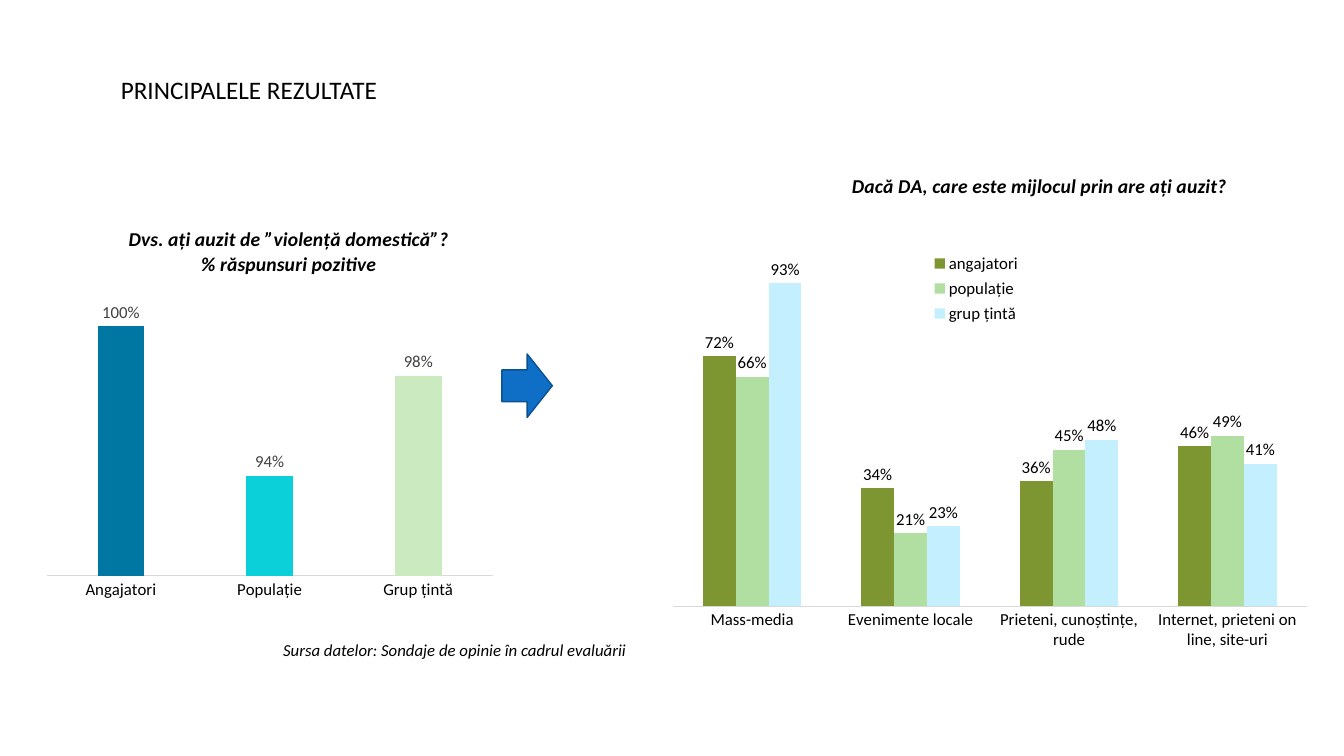
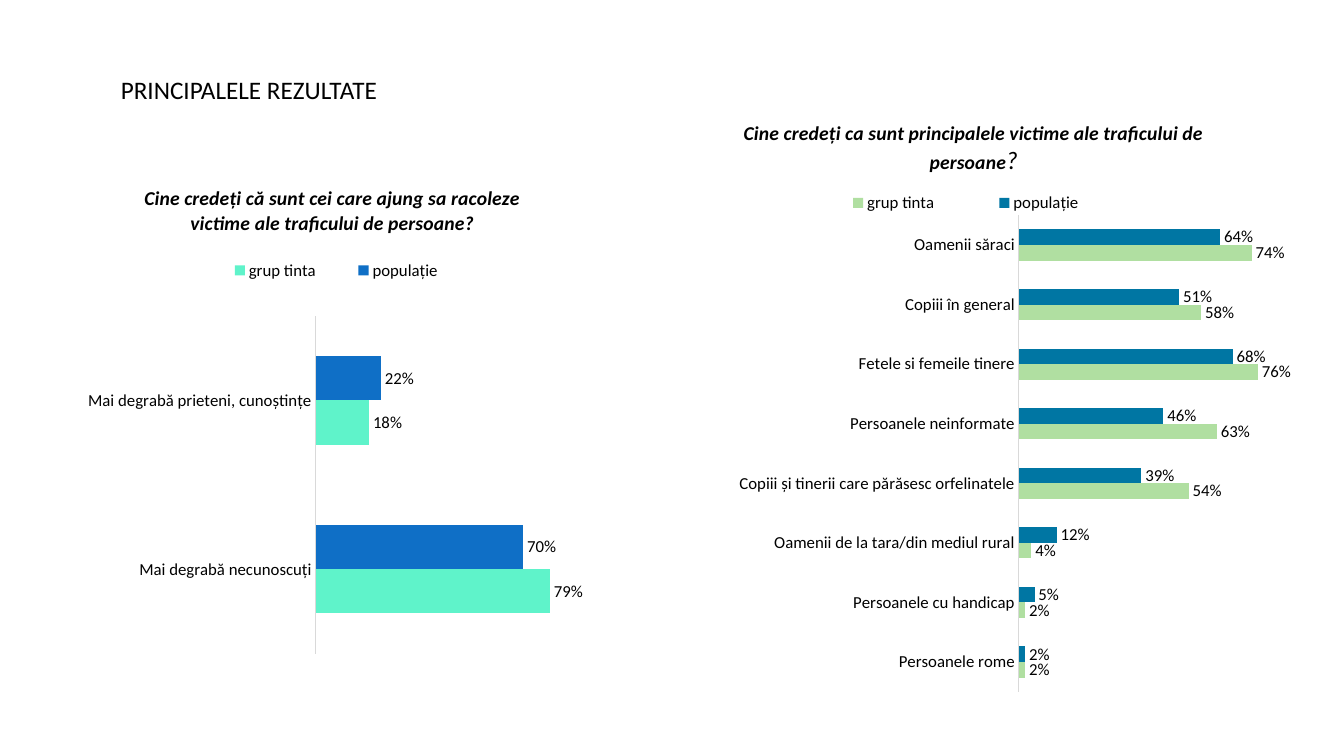
"""Build two slides of survey results with native charts."""
from lxml.etree import SubElement
from pptx import Presentation
from pptx.chart.data import CategoryChartData
from pptx.dml.color import RGBColor
from pptx.enum.chart import (XL_CHART_TYPE, XL_LABEL_POSITION,
                             XL_LEGEND_POSITION, XL_TICK_MARK)
from pptx.enum.shapes import MSO_SHAPE
from pptx.enum.text import MSO_ANCHOR, MSO_AUTO_SIZE, PP_ALIGN
from pptx.oxml.ns import qn
from pptx.util import Cm, Pt

FONT = "Calibri"
BLACK, GREY, RULE = "000000", "404040", "D9D9D9"
BLUE, EDGE, TEAL, CYAN = "0F6FC6", "0B5292", "0076A3", "0BD0D9"
OLIVE, GREEN, PALE, SKY, MINT = "7E9632", "B0DFA1", "CBEAC0", "C4EFFF", "5FF3CA"
COLUMN, BAR = XL_CHART_TYPE.COLUMN_CLUSTERED, XL_CHART_TYPE.BAR_CLUSTERED
HEAD = "PRINCIPALELE REZULTATE"


def rgb(code):
    return RGBColor.from_string(code)


def paint(item, code):
    item.format.fill.solid()
    item.format.fill.fore_color.rgb = rgb(code)


def style(font, size=12, color=BLACK, bold=False, italic=False):
    font.name, font.size = FONT, Pt(size)
    font.color.rgb = rgb(color)
    font.bold, font.italic = bold, italic


def place(part, spot, inner=False):
    """Pin a chart part at fractions of the chart's width and height."""
    for old in part.findall(qn("c:layout")):
        part.remove(old)
    layout = SubElement(part, qn("c:layout"))
    over = part.find(qn("c:overlay"))
    if over is None:
        part.insert(0, layout)
    else:
        over.addprevious(layout)
    manual = SubElement(layout, qn("c:manualLayout"))
    pairs = [("layoutTarget", "inner")] if inner else []
    pairs += [("xMode", "edge"), ("yMode", "edge")]
    pairs += zip("xywh", spot)
    for name, value in pairs:
        SubElement(manual, qn("c:" + name)).set("val", str(value))


def add_title(chart, text, spot, mark=""):
    """Set the question above a chart, with an optional larger end mark."""
    frame = chart.chart_title.text_frame
    frame.text = text
    for para in frame.paragraphs:
        para.alignment = PP_ALIGN.CENTER
        for run in para.runs:
            style(run.font, 14, bold=True, italic=True)
    if mark:
        run = frame.paragraphs[-1].add_run()
        run.text = mark
        style(run.font, 18, italic=True)
    place(chart.element.xpath("c:chart/c:title")[0], spot)


def add_legend(chart, side, spot):
    chart.has_legend = True
    chart.legend.position = side
    chart.legend.include_in_layout = False
    style(chart.legend.font)
    place(chart.element.xpath("c:chart/c:legend")[0], spot)


def set_axes(chart, low, high, flip):
    cats, vals = chart.category_axis, chart.value_axis
    cats.major_tick_mark = cats.minor_tick_mark = XL_TICK_MARK.NONE
    cats.has_major_gridlines = False
    cats.reverse_order = flip
    style(cats.tick_labels.font)
    cats.format.line.color.rgb = rgb(RULE)
    cats.format.line.width = Pt(0.75)
    vals.minimum_scale, vals.maximum_scale = low, high
    vals.has_major_gridlines = False
    vals.visible = False


def add_bars(slide, kind, box, cats, rows, plot, low=0, high=1, gap=182,
             overlap=0, ink=BLACK):
    """Add a clustered chart from rows of name, colour and values."""
    data = CategoryChartData(number_format="0%")
    data.categories = cats
    for name, _, vals in rows:
        data.add_series(name, vals)
    chart = slide.shapes.add_chart(kind, *map(Cm, box), data).chart
    style(chart.font)
    chart.has_legend = False
    set_axes(chart, low, high, kind == BAR)
    group = chart.plots[0]
    group.gap_width, group.overlap = gap, overlap
    group.vary_by_categories = False
    for series, (_, color, _) in zip(group.series, rows):
        series.invert_if_negative = False
        paint(series, color)
        labels = series.data_labels
        labels.show_value = True
        labels.number_format, labels.number_format_is_linked = "0%", False
        labels.position = XL_LABEL_POSITION.OUTSIDE_END
        style(labels.font, color=ink)
    place(chart.element.xpath("c:chart/c:plotArea")[0], plot, inner=True)
    return chart


def add_slide(deck):
    """Add a title-only slide under the shared heading."""
    slide = deck.slides.add_slide(deck.slide_layouts[5])
    head = slide.shapes.title
    head.left, head.top, head.width, head.height = map(Cm, (2.79, 1.75, 8.69, 1.02))
    frame = head.text_frame
    frame.text = HEAD
    frame.auto_size = MSO_AUTO_SIZE.NONE
    frame.vertical_anchor = MSO_ANCHOR.MIDDLE
    frame.paragraphs[0].alignment = PP_ALIGN.LEFT
    style(frame.paragraphs[0].runs[0].font, 18)
    return slide


def add_note(slide, text, box):
    frame = slide.shapes.add_textbox(*map(Cm, box)).text_frame
    frame.word_wrap = True
    frame.text = text
    para = frame.paragraphs[0]
    para.alignment = PP_ALIGN.CENTER
    style(para.runs[0].font, italic=True)


def add_arrow(slide, box):
    arrow = slide.shapes.add_shape(MSO_SHAPE.RIGHT_ARROW, *map(Cm, box))
    arrow.shadow.inherit = False
    arrow.fill.solid()
    arrow.fill.fore_color.rgb = rgb(BLUE)
    arrow.line.color.rgb = rgb(EDGE)
    arrow.line.width = Pt(1)


def build_heard(deck):
    """Show who has heard of domestic violence, and where."""
    slide = add_slide(deck)
    heard = add_bars(
        slide, COLUMN, (0.94, 5, 11.71, 10.34),
        ["Angajatori", "Populație", "Grup țintă"],
        [("Series 1", BLUE, (1, 0.94, 0.98))],
        (0.02, 0.19, 0.96, 0.73), low=0.9, high=1.02, gap=219, overlap=-27,
        ink=GREY)
    for index, color in enumerate((TEAL, CYAN, PALE)):
        paint(heard.plots[0].series[0].points[index], color)
    add_title(heard, "Dvs. ați auzit de ”violență domestică”?\n"
              "% răspunsuri pozitive", (0.19, 0.06))
    media = add_bars(
        slide, COLUMN, (16.28, 3.3, 16.99, 13.46),
        ["Mass-media", "Evenimente locale", "Prieteni, cunoștințe, rude",
         "Internet, prieteni on line, site-uri"],
        [("angajatori", OLIVE, (0.72, 0.34, 0.36, 0.46)),
         ("populație", GREEN, (0.66, 0.21, 0.45, 0.49)),
         ("grup țintă", SKY, (0.93, 0.23, 0.48, 0.41))],
        (0.04, 0.24, 0.94, 0.65))
    add_title(media, "Dacă DA, care este mijlocul prin are ați auzit?",
              (0.3, 0.07))
    add_legend(media, XL_LEGEND_POSITION.RIGHT, (0.42, 0.22, 0.14, 0.15))
    add_note(slide, "Sursa datelor: Sondaje de opinie în cadrul evaluării",
             (5.54, 16, 11.84, 0.76))
    add_arrow(slide, (12.65, 8.92, 1.27, 1.6))


def build_victims(deck):
    """Show views on the recruiters and victims of trafficking."""
    slide = add_slide(deck)
    victims = add_bars(
        slide, BAR, (16.33, 2.46, 16.69, 15.6),
        ["Oamenii săraci", "Copiii în general", "Fetele si femeile tinere",
         "Persoanele neinformate",
         "Copiii și tinerii care părăsesc orfelinatele",
         "Oamenii de la tara/din mediul rural", "Persoanele cu handicap",
         "Persoanele rome"],
        [("populație", TEAL, (0.64, 0.51, 0.68, 0.46, 0.39, 0.12, 0.05, 0.02)),
         ("grup tinta", GREEN, (0.74, 0.58, 0.76, 0.63, 0.54, 0.04, 0.02, 0.02))],
        (0.56, 0.19, 0.38, 0.77), high=0.8)
    add_title(victims, "Cine credeți ca sunt principalele victime ale "
              "traficului de\npersoane", (0.14, 0.03), mark="?")
    add_legend(victims, XL_LEGEND_POSITION.TOP, (0.22, 0.15, 0.52, 0.04))
    agents = add_bars(
        slide, BAR, (1.88, 3.91, 12.93, 13.51),
        ["Mai degrabă prieteni, cunoștințe", "Mai degrabă necunoscuți"],
        [("populație", BLUE, (0.22, 0.7)), ("grup tinta", MINT, (0.18, 0.79))],
        (0.47, 0.3, 0.52, 0.63), high=0.9)
    add_title(agents, "Cine credeți că sunt cei care ajung sa racoleze\n"
              "victime ale traficului de persoane?", (0.13, 0.05))
    add_legend(agents, XL_LEGEND_POSITION.TOP, (0.24, 0.19, 0.54, 0.05))


def main():
    deck = Presentation()
    deck.slide_width, deck.slide_height = Cm(33.87), Cm(19.05)
    build_heard(deck)
    build_victims(deck)
    deck.save("out.pptx")


if __name__ == "__main__":
    main()
